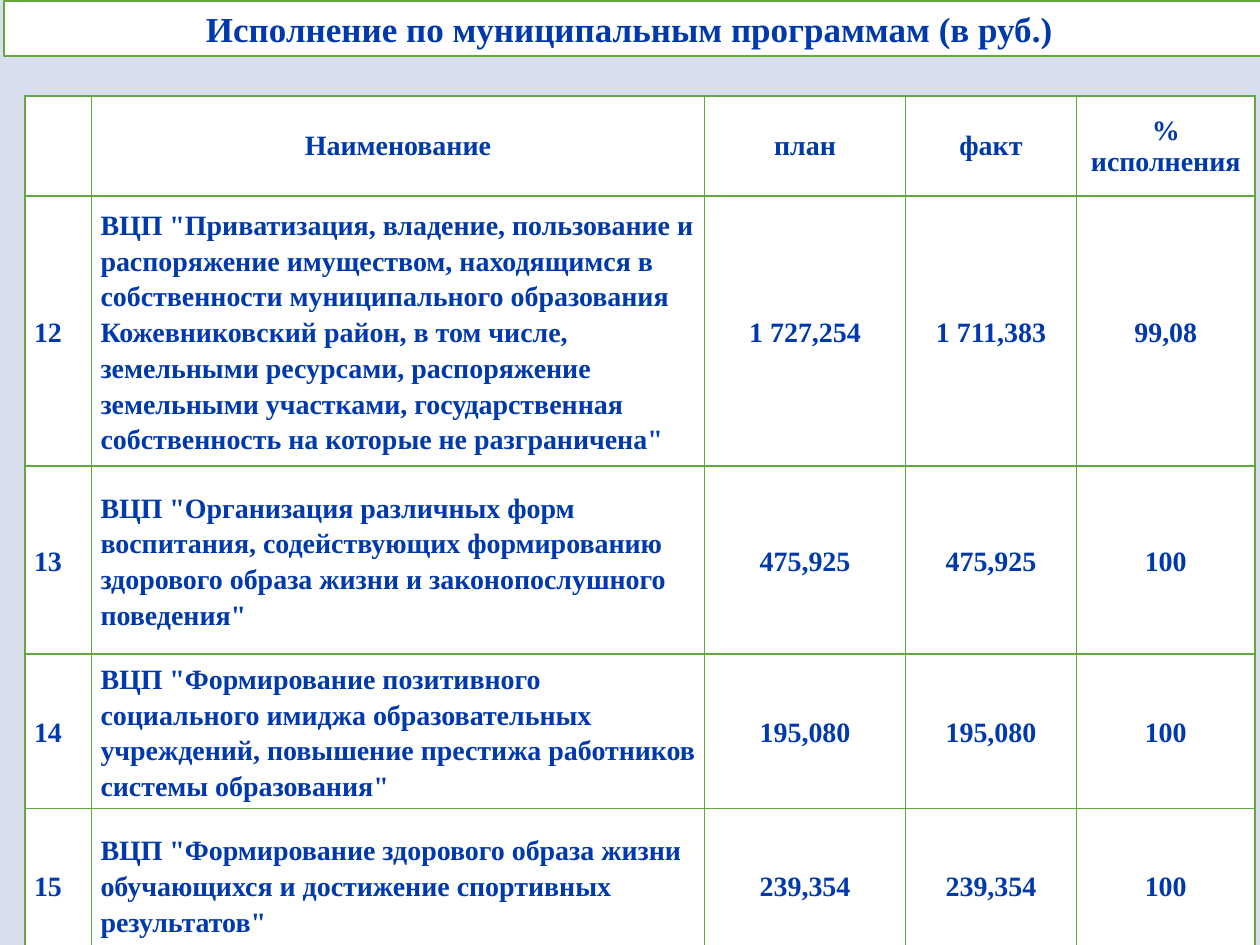
import pptx
import pptx.util
import pptx.dml.color
import pptx.enum.text
import pptx.oxml.ns
import lxml.etree

Pt = pptx.util.Pt
RGBColor = pptx.dml.color.RGBColor
Align = pptx.enum.text.PP_ALIGN
Anchor = pptx.enum.text.MSO_ANCHOR
qn = pptx.oxml.ns.qn

COLORS = {"background": "D8DEED", "panel": "FFFFFF", "border": "64A73B", "text": "0039AC"}
FONT = "Times New Roman"


def set_font(paragraph, size):
    paragraph.font.name = FONT
    paragraph.font.size = Pt(size)
    paragraph.font.bold = True
    paragraph.font.color.rgb = RGBColor.from_string(COLORS["text"])


def add_borders(cell):
    properties = cell._tc.get_or_add_tcPr()
    for side in ("lnL", "lnR", "lnT", "lnB"):
        line = lxml.etree.SubElement(properties, qn(f"a:{side}"), w=str(Pt(1)))
        fill = lxml.etree.SubElement(line, qn("a:solidFill"))
        lxml.etree.SubElement(fill, qn("a:srgbClr"), val=COLORS["border"])


deck = pptx.Presentation()
deck.slide_width, deck.slide_height = Pt(720), Pt(540)
page = deck.slides.add_slide(deck.slide_layouts[5])
page.background.fill.solid()
page.background.fill.fore_color.rgb = RGBColor.from_string(COLORS["background"])

title = page.shapes.title
title.left, title.top, title.width, title.height = Pt(2.2), Pt(0.5), Pt(720), Pt(31.5)
title.fill.solid()
title.fill.fore_color.rgb = RGBColor.from_string(COLORS["panel"])
title.line.color.rgb = RGBColor.from_string(COLORS["border"])
title.line.width = Pt(1.25)
title.text_frame.text = "Исполнение по муниципальным программам (в руб.) "
title.text_frame.word_wrap = True
title.text_frame.auto_size = pptx.enum.text.MSO_AUTO_SIZE.NONE
title.text_frame.vertical_anchor = Anchor.MIDDLE
title.text_frame.paragraphs[0].alignment = Align.CENTER
set_font(title.text_frame.paragraphs[0], 20)

rows = [
    ("", "Наименование", "план", "факт", "% исполнения"),
    ("12", 'ВЦП "Приватизация, владение, пользование и распоряжение имуществом, '
     "находящимся в собственности муниципального образования Кожевниковский район, "
     "в том числе, земельными ресурсами, распоряжение земельными участками, "
     'государственная собственность на которые не разграничена"',
     "1 727,254", "1 711,383", "99,08"),
    ("13", 'ВЦП "Организация различных форм воспитания, содействующих формированию '
     'здорового образа жизни и законопослушного поведения"',
     "475,925", "475,925", "100"),
    ("14", 'ВЦП "Формирование позитивного социального имиджа образовательных учреждений, '
     'повышение престижа работников системы образования"',
     "195,080", "195,080", "100"),
    ("15", 'ВЦП "Формирование здорового образа жизни обучающихся и достижение '
     'спортивных результатов"',
     "239,354", "239,354", "100"),
]
column_widths = [38, 350.5, 114.75, 97.75, 102]
row_heights = [57.25, 154.25, 107.5, 88.25, 87.5]

frame = page.shapes.add_table(len(rows), len(column_widths), Pt(14.2), Pt(54.75),
                              Pt(sum(column_widths)), Pt(sum(row_heights)))
table = frame.table
table.first_row = False
table.horz_banding = False
for column, width in zip(table.columns, column_widths):
    column.width = Pt(width)

for row_index, (texts, height) in enumerate(zip(rows, row_heights)):
    table.rows[row_index].height = Pt(height)
    is_header = row_index == 0
    for column_index, text in enumerate(texts):
        cell = table.cell(row_index, column_index)
        add_borders(cell)
        cell.fill.solid()
        cell.fill.fore_color.rgb = RGBColor.from_string(COLORS["panel"])
        cell.vertical_anchor = Anchor.MIDDLE
        cell.margin_left = cell.margin_right = Pt(0.75 if is_header else 5.25)
        cell.margin_top = Pt(0.75 if is_header else 0)
        cell.margin_bottom = Pt(0)
        cell.text = text
        paragraph = cell.text_frame.paragraphs[0]
        paragraph.alignment = Align.CENTER if is_header or column_index > 1 else Align.LEFT
        paragraph.line_spacing = 1.0 if is_header else 1.15
        set_font(paragraph, 16)

deck.save("out.pptx")
